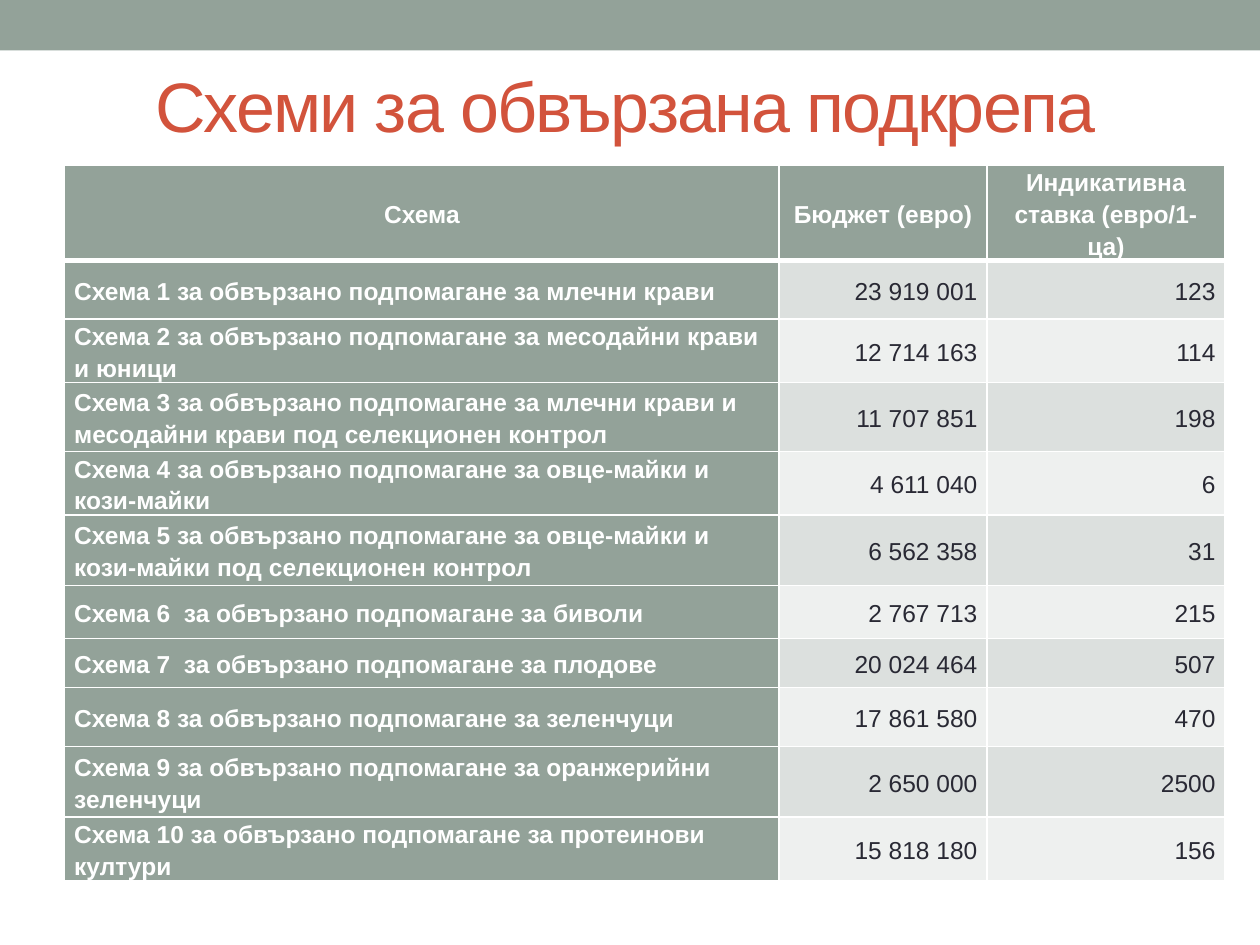
from lxml import etree
from pptx import Presentation
from pptx.dml.color import RGBColor
from pptx.enum.shapes import MSO_SHAPE
from pptx.enum.text import MSO_ANCHOR, MSO_AUTO_SIZE, PP_ALIGN
from pptx.oxml.ns import qn
from pptx.util import Pt

RECTANGLE = MSO_SHAPE.RECTANGLE
MIDDLE = MSO_ANCHOR.MIDDLE
NO_AUTOFIT = MSO_AUTO_SIZE.NONE
LEFT, CENTER, RIGHT = PP_ALIGN.LEFT, PP_ALIGN.CENTER, PP_ALIGN.RIGHT

FONT = "Arial"
TITLE_ONLY = 5
COLORS = {
    "sage": "93A299",
    "title": "D2533C",
    "text": "292934",
    "white": "FFFFFF",
    "band_dark": "DCE0DE",
    "band_light": "EEF0EF",
}

HEADERS = ["Схема", "Бюджет (евро)", "Индикативна ставка (евро/1-ца)"]
SCHEMES = [
    ("Схема 1 за обвързано подпомагане за млечни крави", "23 919 001", "123"),
    ("Схема 2 за обвързано подпомагане за месодайни крави и юници", "12 714 163", "114"),
    ("Схема 3 за обвързано подпомагане за млечни крави и месодайни крави "
     "под селекционен контрол", "11 707 851", "198"),
    ("Схема 4 за обвързано подпомагане за овце-майки и кози-майки", "4 611 040", "6"),
    ("Схема 5 за обвързано подпомагане за овце-майки и кози-майки "
     "под селекционен контрол", "6 562 358", "31"),
    ("Схема 6  за обвързано подпомагане за биволи", "2 767 713", "215"),
    ("Схема 7  за обвързано подпомагане за плодове", "20 024 464", "507"),
    ("Схема 8 за обвързано подпомагане за зеленчуци", "17 861 580", "470"),
    ("Схема 9 за обвързано подпомагане за оранжерийни зеленчуци", "2 650 000", "2500"),
    ("Схема 10 за обвързано подпомагане за протеинови култури", "15 818 180", "156"),
]
COLUMN_WIDTHS = [408.2, 118.8, 136]
ROW_HEIGHTS = [40.3, 33.5, 33.8, 39.6, 33.8, 40.3, 30.2, 28.1, 33.8, 40.3, 35.3]


def rgb(name):
    return RGBColor.from_string(COLORS[name])


def style_font(paragraph, size, color, bold=False):
    font = paragraph.font
    font.name, font.size, font.bold = FONT, Pt(size), bold
    font.color.rgb = rgb(color)


def add_top_band(slide, left, top, width, height):
    band = slide.shapes.add_shape(RECTANGLE, Pt(left), Pt(top), Pt(width), Pt(height))
    band.shadow.inherit = False
    band.fill.solid()
    band.fill.fore_color.rgb = rgb("sage")
    band.line.fill.background()


def place_title(slide, text, left, top, width, height):
    title = slide.shapes.title
    title.left, title.top, title.width, title.height = map(Pt, (left, top, width, height))
    frame = title.text_frame
    frame.text = text
    frame.auto_size = NO_AUTOFIT
    frame.vertical_anchor = MIDDLE
    heading = frame.paragraphs[0]
    heading.alignment = CENTER
    style_font(heading, 40, "title")
    heading.runs[0].font._element.set("spc", "-100")


def set_borders(cell, top, bottom):
    """Draw white cell borders: 1 pt at the sides, given widths above and below."""
    properties = cell._tc.get_or_add_tcPr()
    for side, width in (("L", 1), ("R", 1), ("T", top), ("B", bottom)):
        line = etree.SubElement(properties, qn(f"a:ln{side}"), w=str(Pt(width)))
        fill = etree.SubElement(line, qn("a:solidFill"))
        etree.SubElement(fill, qn("a:srgbClr"), val=COLORS["white"])


def fill_cell(cell, text, row, column):
    is_header = row == 0
    is_label = is_header or column == 0
    band = "band_dark" if row % 2 else "band_light"
    set_borders(cell, 3 if row == 1 else 1, 3 if is_header else 1)
    cell.fill.solid()
    cell.fill.fore_color.rgb = rgb("sage" if is_label else band)
    cell.margin_left = cell.margin_right = Pt(5.4)
    cell.margin_top = cell.margin_bottom = 0
    cell.vertical_anchor = MIDDLE
    cell.text = text
    paragraph = cell.text_frame.paragraphs[0]
    paragraph.line_spacing = 1.15
    paragraph.alignment = CENTER if is_header else LEFT if is_label else RIGHT
    style_font(paragraph, 14, "white" if is_label else "text", is_label)


def add_scheme_table(slide, left, top):
    records = [HEADERS, *SCHEMES]
    table = slide.shapes.add_table(
        len(records), len(HEADERS), Pt(left), Pt(top),
        Pt(sum(COLUMN_WIDTHS)), Pt(sum(ROW_HEIGHTS))).table
    table.first_col = True
    for column, width in zip(table.columns, COLUMN_WIDTHS):
        column.width = Pt(width)
    for row, height in zip(table.rows, ROW_HEIGHTS):
        row.height = Pt(height)
    for r, record in enumerate(records):
        for c, text in enumerate(record):
            fill_cell(table.cell(r, c), text, r, c)


def main():
    deck = Presentation()
    deck.slide_width, deck.slide_height = Pt(720), Pt(540)
    slide = deck.slides.add_slide(deck.slide_layouts[TITLE_ONLY])
    add_top_band(slide, 0, 0, 720, 28.8)
    place_title(slide, "Схеми за обвързана подкрепа", 25.5, 26, 663.5, 67)
    add_scheme_table(slide, 37, 94.5)
    deck.save("out.pptx")


if __name__ == "__main__":
    main()
